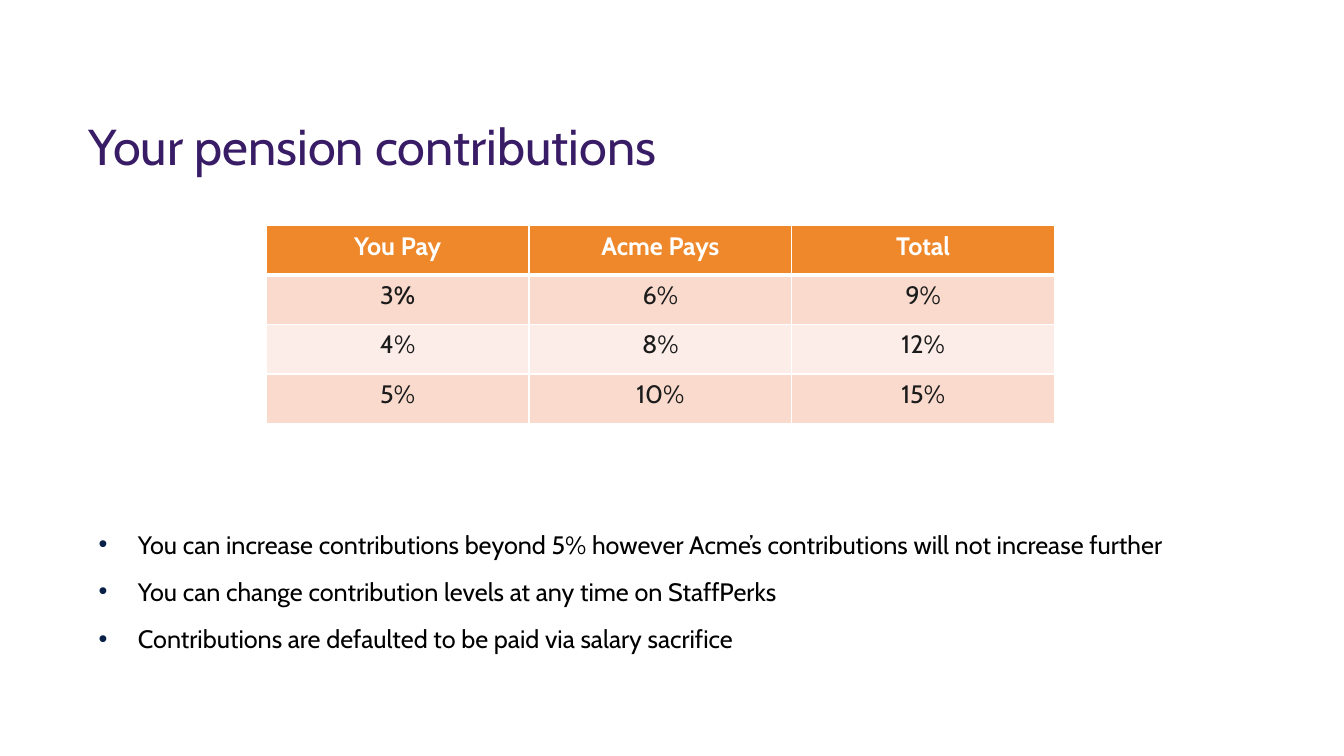
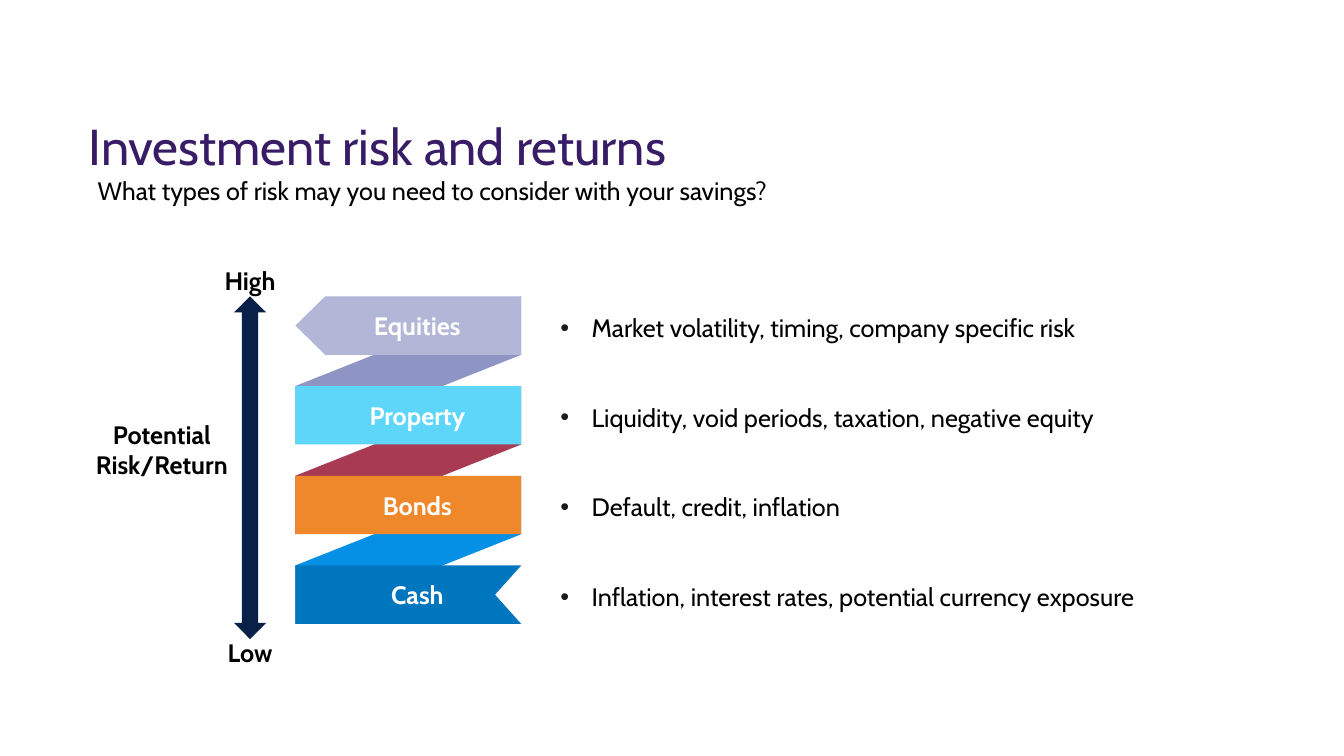
import pptx
import pptx.dml.color
import pptx.enum.shapes
import pptx.enum.text
import pptx.oxml.ns
import pptx.util
from lxml import etree

Inches = pptx.util.Inches
SHAPE = pptx.enum.shapes.MSO_SHAPE
ALIGN = pptx.enum.text.PP_ALIGN
ANCHOR = pptx.enum.text.MSO_ANCHOR

COLOURS = {
    "title": "391C66", "text": "000000", "dark": "1B1B1B", "white": "FFFFFF",
    "navy": "092149", "orange": "EF882B", "peach": "F9DACD", "pale": "FCEDE8",
    "lilac": "B2B6D7", "lilac fold": "8E94C4", "sky": "5DD6F9",
    "red fold": "A83A54", "blue": "0076BE", "blue fold": "0590E5",
}
BODY = {"size": pptx.util.Pt(18), "name": "Cabin", "bold": False}
STRONG = {**BODY, "bold": True}
TITLE = {**BODY, "size": pptx.util.Pt(36)}
NO_MARGINS = {"margin_left": 0, "margin_right": 0, "margin_top": 0, "margin_bottom": 0}


def rgb(colour):
    return pptx.dml.color.RGBColor.from_string(COLOURS[colour])


def set_values(target, values):
    for name, value in values.items():
        setattr(target, name, value)


def add_xml(parent, tag, **attributes):
    return etree.SubElement(parent, pptx.oxml.ns.qn(tag), attributes)


def add_span(para, text, style=BODY, colour="text"):
    span = para.add_run()
    span.text = text
    set_values(span.font, style)
    span.font.color.rgb = rgb(colour)


def add_bullet(para, indent, colour):
    properties = para._p.get_or_add_pPr()
    properties.set("marL", str(Inches(indent)))
    properties.set("indent", str(-Inches(indent)))
    add_xml(add_xml(properties, "a:buClr"), "a:srgbClr", val=COLOURS[colour])
    add_xml(properties, "a:buFont", typeface="Arial")
    add_xml(properties, "a:buChar", char="•")


def add_text(page, box, lines, style=BODY, colour="text", bullet=None,
             frame_values=None, para_values=None):
    frame = page.shapes.add_textbox(*map(Inches, box)).text_frame
    set_values(frame, {"word_wrap": True, **(frame_values or {})})
    for number, line in enumerate(lines):
        para = frame.add_paragraph() if number else frame.paragraphs[0]
        if bullet:
            add_bullet(para, *bullet)
        set_values(para, para_values or {})
        add_span(para, line, style, colour)


def paint(shape, colour):
    shape.shadow.inherit = False
    shape.fill.solid()
    shape.fill.fore_color.rgb = rgb(colour)
    shape.line.fill.background()
    return shape


def add_outline(page, points, colour):
    points = [(Inches(x), Inches(y)) for x, y in points]
    builder = page.shapes.build_freeform(*points[0])
    builder.add_line_segments(points[1:], close=True)
    return paint(builder.convert_to_shape(), colour)


def add_page(deck, title):
    page = deck.slides.add_slide(deck.slide_layouts[6])
    add_text(page, (0.88, 1.16, 11.58, 0.57), [title], TITLE, "title",
             frame_values={**NO_MARGINS, "vertical_anchor": ANCHOR.MIDDLE})
    return page


def add_border(cell, side, width):
    line = add_xml(cell._tc.get_or_add_tcPr(), "a:ln" + side,
                   w=str(pptx.util.Pt(width)))
    add_xml(add_xml(line, "a:solidFill"), "a:srgbClr", val=COLOURS["white"])


def add_contribution_table(page, box, rows):
    table = page.shapes.add_table(len(rows), len(rows[0]), *map(Inches, box)).table
    for row_number, row in enumerate(rows):
        header = row_number == 0
        fill = "orange" if header else ("pale", "peach")[row_number % 2]
        widths = {"L": 1, "R": 1, "T": 3 if row_number == 1 else 1,
                  "B": 3 if header else 1}
        for column_number, spans in enumerate(row):
            cell = table.cell(row_number, column_number)
            for side, width in widths.items():
                add_border(cell, side, width)
            cell.fill.solid()
            cell.fill.fore_color.rgb = rgb(fill)
            para = cell.text_frame.paragraphs[0]
            para.alignment = ALIGN.CENTER
            for text, style in spans:
                add_span(para, text, style, "white" if header else "dark")


def add_risk_scale(page, box):
    """Double arrow with a word at each end and a caption on its left."""
    left, top, width, height = box
    paint(page.shapes.add_shape(SHAPE.UP_DOWN_ARROW, *map(Inches, box)), "navy")
    end_left = left + width / 2 - 0.67
    labels = [
        ("High", (end_left, top - 0.36, 1.34, 0.4)),
        ("Low", (end_left, top + height - 0.07, 1.34, 0.4)),
        ("Potential Risk/Return", (left - 1.59, top + 1.17, 1.75, 0.71)),
    ]
    for text, place in labels:
        add_text(page, place, [text], STRONG, para_values={"alignment": ALIGN.CENTER})


def add_ribbon(page, box, pitch, bands, folds):
    """Folded ribbon; the box is that of its top band."""
    left, top, width, height = box
    right = left + width

    # Folds lie behind the bands
    for number, colour in enumerate(folds):
        upper = top + number * pitch
        lower = upper + pitch
        add_outline(page, [(left, lower + height), (right, upper + height),
                           (right, upper), (left, lower)], colour)

    # Bands: arrow at the top, notched tail at the bottom
    for number, (label, colour) in enumerate(bands):
        upper = top + number * pitch
        margins = {**NO_MARGINS, "margin_left": Inches(0.18)}
        if number == len(bands) - 1:
            band = add_outline(page, [
                (right, upper + height), (left, upper + height), (left, upper),
                (right, upper), (right - 0.26, upper + height / 2)], colour)
        else:
            kind = SHAPE.RECTANGLE if number else SHAPE.LEFT_ARROW
            band = paint(page.shapes.add_shape(
                kind, *map(Inches, (left, upper, width, height))), colour)
        if number == 0:
            band.adjustments[0] = 1
            band.adjustments[1] = 0.51
            margins = {**NO_MARGINS, "margin_right": Inches(0.12)}
        frame = band.text_frame
        set_values(frame, {**margins, "vertical_anchor": ANCHOR.MIDDLE})
        frame.paragraphs[0].alignment = ALIGN.CENTER
        add_span(frame.paragraphs[0], label, STRONG, "white")


def build_contributions(deck):
    page = add_page(deck, "Your pension contributions")
    rows = [[[(text, STRONG)] for text in ("You Pay", "Acme Pays", "Total")]]
    for yours in (3, 4, 5):
        rows.append([[(f"{yours * factor}%", BODY)] for factor in (1, 2, 3)])
    rows[1][0] = [("3", BODY), ("%", STRONG)]
    add_contribution_table(page, (2.64, 2.24, 7.82, 1.96), rows)
    add_text(page, (0.88, 5.2, 11.58, 1.35), [
        "You can increase contributions beyond 5% however Acme’s contributions will not increase further",
        "You can change contribution levels at any time on StaffPerks",
        "Contributions are defaulted to be paid via salary sacrifice",
    ], bullet=(0.39, "navy"), para_values={"space_after": pptx.util.Pt(12)})


def build_risks(deck):
    page = add_page(deck, "Investment risk and returns")
    add_text(page, (0.87, 1.69, 8.98, 0.4),
             ["What types of risk may you need to consider with your savings?"])
    add_risk_scale(page, (2.32, 2.94, 0.32, 3.4))

    # Asset classes and the risks beside them
    assets = [
        ("Equities", "lilac", "Market volatility, timing, company specific risk"),
        ("Property", "sky", "Liquidity, void periods, taxation, negative equity"),
        ("Bonds", "orange", "Default, credit, inflation"),
        ("Cash", "blue", "Inflation, interest rates, potential currency exposure"),
    ]
    pitch = 0.89
    add_ribbon(page, (2.93, 2.94, 2.24, 0.58), pitch, [asset[:2] for asset in assets],
               ["lilac fold", "red fold", "blue fold"])
    for number, (_, _, risks) in enumerate(assets):
        add_text(page, (5.46, 3.05 + number * pitch, 7.44, 0.4), [risks],
                 bullet=(0.31, "dark"))


def main():
    deck = pptx.Presentation()
    deck.slide_width = Inches(13.33)
    deck.slide_height = Inches(7.5)
    build_contributions(deck)
    build_risks(deck)
    deck.save("out.pptx")


if __name__ == "__main__":
    main()
